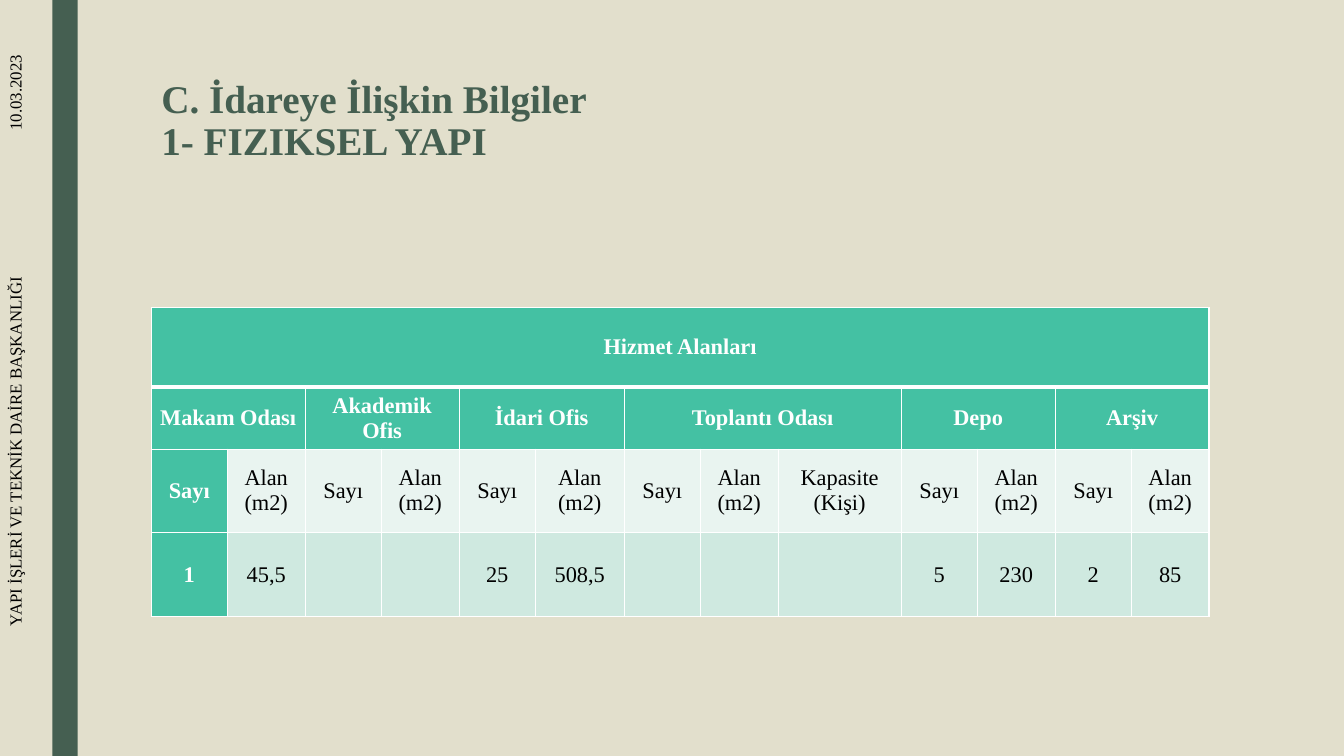
import pptx
import pptx.dml.color
import pptx.enum.shapes
import pptx.enum.text
import pptx.util
from lxml import etree
from pptx.oxml.ns import qn

Cm = pptx.util.Cm
Pt = pptx.util.Pt
RGBColor = pptx.dml.color.RGBColor
ALIGN = pptx.enum.text.PP_ALIGN
ANCHOR = pptx.enum.text.MSO_ANCHOR

SAND = RGBColor(0xE2, 0xDF, 0xCC)
FOREST = RGBColor(0x45, 0x5F, 0x51)
TEAL = RGBColor(0x44, 0xC1, 0xA3)
MINT_LIGHT = RGBColor(0xE9, 0xF4, 0xF0)
MINT = RGBColor(0xCF, 0xE9, 0xE0)
WHITE = RGBColor(0xFF, 0xFF, 0xFF)
BLACK = RGBColor(0, 0, 0)

# Each service area with its (column heading, value) pairs
SERVICE_AREAS = [
    ("Makam Odası", [("Sayı", "1"), ("Alan (m2)", "45,5")]),
    ("Akademik Ofis", [("Sayı", ""), ("Alan (m2)", "")]),
    ("İdari Ofis", [("Sayı", "25"), ("Alan (m2)", "508,5")]),
    ("Toplantı Odası", [("Sayı", ""), ("Alan (m2)", ""), ("Kapasite (Kişi)", "")]),
    ("Depo", [("Sayı", "5"), ("Alan (m2)", "230")]),
    ("Arşiv", [("Sayı", "2"), ("Alan (m2)", "85")]),
]
HEADING_WIDTHS = {"Sayı": 1.92, "Alan (m2)": 1.96, "Kapasite (Kişi)": 3.1}
OFFICE_AREA_COLUMN, OFFICE_AREA_WIDTH = 5, 2.24
ROW_HEIGHTS = [2, 1.57, 2.09, 2.13]


class ReportSlide:
    font_name = "Times New Roman"

    def __init__(self, deck):
        self.slide = deck.slides.add_slide(deck.slide_layouts[5])
        self.slide.background.fill.solid()
        self.slide.background.fill.fore_color.rgb = SAND

    def set_text(self, frame, text, size, color, bold=False, align=ALIGN.LEFT):
        frame.text = text
        for paragraph in frame.paragraphs:
            paragraph.alignment = align
            for run in paragraph.runs:
                run.font.name = self.font_name
                run.font.size = Pt(size)
                run.font.bold = bold
                run.font.color.rgb = color

    def title(self, text, left, top, width, height):
        heading = self.slide.shapes.title
        heading.left, heading.top = Cm(left), Cm(top)
        heading.width, heading.height = Cm(width), Cm(height)
        frame = heading.text_frame
        self.set_text(frame, text, 28, FOREST, bold=True)
        frame.auto_size = pptx.enum.text.MSO_AUTO_SIZE.NONE
        frame.vertical_anchor = ANCHOR.TOP
        frame.paragraphs[0].line_spacing = 0.89

    def band(self, left, top, width, height):
        stripe = self.slide.shapes.add_shape(
            pptx.enum.shapes.MSO_SHAPE.RECTANGLE,
            Cm(left), Cm(top), Cm(width), Cm(height))
        stripe.shadow.inherit = False
        stripe.fill.solid()
        stripe.fill.fore_color.rgb = FOREST
        stripe.line.fill.background()

    def side_note(self, text, left, top, width, height):
        note = self.slide.shapes.add_textbox(Cm(left), Cm(top), Cm(width), Cm(height))
        note.rotation = 270
        note.text_frame.word_wrap = True
        self.set_text(note.text_frame, text, 12, BLACK)

    def table(self, left, top, widths, heights):
        grid = self.slide.shapes.add_table(
            len(heights), len(widths), Cm(left), Cm(top),
            Cm(sum(widths)), Cm(sum(heights))).table
        for column, width in zip(grid.columns, widths):
            column.width = Cm(width)
        for row, height in zip(grid.rows, heights):
            row.height = Cm(height)
        return grid

    def cell(self, cell, text, fill, header=False, thick_side=None):
        cell.margin_left = cell.margin_right = Cm(0.18)
        cell.margin_top = cell.margin_bottom = 0
        cell.vertical_anchor = ANCHOR.MIDDLE
        self.set_text(cell.text_frame, text, 16, WHITE if header else BLACK,
                      bold=header, align=ALIGN.CENTER)
        # Borders come before the fill in the cell properties
        properties = cell._tc.get_or_add_tcPr()
        for side in ("lnL", "lnR", "lnT", "lnB"):
            width = Pt(3 if side == thick_side else 1)
            border = etree.SubElement(properties, qn("a:" + side), w=str(width))
            solid = etree.SubElement(border, qn("a:solidFill"))
            etree.SubElement(solid, qn("a:srgbClr"), val=str(WHITE))
        cell.fill.solid()
        cell.fill.fore_color.rgb = fill


def add_service_table(page):
    columns = [pair for _, pairs in SERVICE_AREAS for pair in pairs]
    widths = [HEADING_WIDTHS[heading] for heading, _ in columns]
    widths[OFFICE_AREA_COLUMN] = OFFICE_AREA_WIDTH
    grid = page.table(3.81, 7.75, widths, ROW_HEIGHTS)

    # Text of the two merged header rows, keyed by starting column
    area_names, start = {}, 0
    for name, pairs in SERVICE_AREAS:
        area_names[start] = name
        end = start + len(pairs) - 1
        grid.cell(1, start).merge(grid.cell(1, end))
        start = end + 1
    grid.cell(0, 0).merge(grid.cell(0, len(columns) - 1))

    for index, (heading, value) in enumerate(columns):
        first = index == 0
        page.cell(grid.cell(0, index), "Hizmet Alanları" if first else "",
                  TEAL, header=True, thick_side="lnB")
        page.cell(grid.cell(1, index), area_names.get(index, ""),
                  TEAL, header=True, thick_side="lnT")
        page.cell(grid.cell(2, index), heading, TEAL if first else MINT_LIGHT, header=first)
        page.cell(grid.cell(3, index), value, TEAL if first else MINT, header=first)


def main():
    deck = pptx.Presentation()
    deck.slide_width, deck.slide_height = Cm(33.87), Cm(19.05)
    page = ReportSlide(deck)

    # Side band with date and department
    page.band(1.32, 0, 0.64, 19.05)
    page.side_note("10.03.2023", -1.4, 1.02, 3.91, 1.12)
    page.side_note("YAPI İŞLERİ VE TEKNİK DAİRE BAŞKANLIĞI", -5.59, 9.8, 11.81, 0.64)

    # Title and service areas
    page.title("C. İdareye İlişkin Bilgiler\v1- FIZIKSEL YAPI", 3.81, 1.9, 26.67, 2.85)
    add_service_table(page)

    deck.save("out.pptx")


if __name__ == "__main__":
    main()
